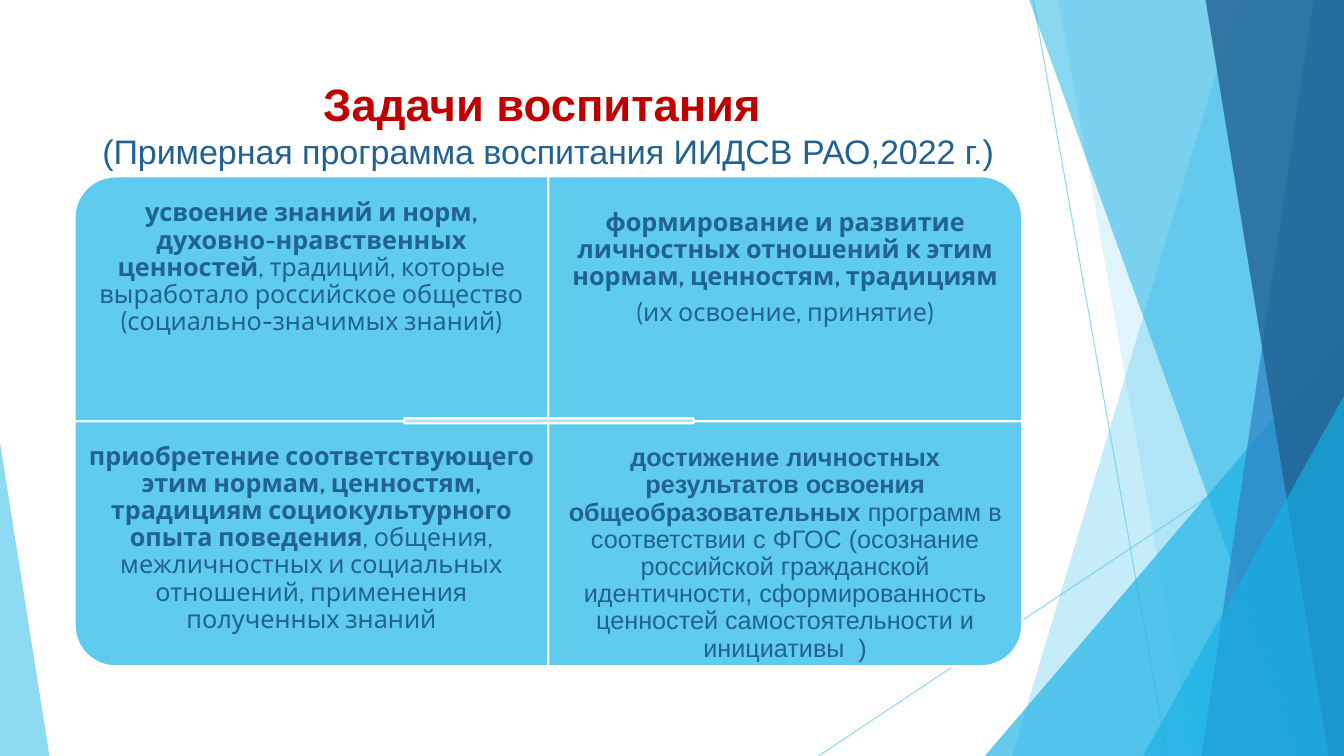
import dataclasses

import lxml.etree
import pptx
import pptx.dml.color
import pptx.enum.shapes
import pptx.enum.text
import pptx.oxml.ns
import pptx.util

SHAPES = pptx.enum.shapes.MSO_SHAPE
ANCHOR = pptx.enum.text.MSO_ANCHOR


@dataclasses.dataclass(frozen=True)
class Theme:
    sky: str = "5FCBEF"
    cyan: str = "17B0E4"
    blue: str = "2E83C3"
    navy: str = "226292"
    pale: str = "B6E2F6"
    red: str = "C00000"
    white: str = "FFFFFF"
    heading_font: str = "Arial"
    body_font: str = "Cabin"
    heading_size: float = 32.4
    subtitle_size: float = 24.3
    body_size: float = 18
    panel_line: float = 1.5
    thin_line: float = 0.75


def add_run(paragraph, text, font, size, color, bold=False):
    run = paragraph.add_run()
    run.text = text
    run.font.name = font
    run.font.size = pptx.util.Pt(size)
    run.font.bold = bold
    run.font.color.rgb = pptx.dml.color.RGBColor.from_string(color)


def set_opacity(fill_element, percent):
    color = next(fill_element.iter(pptx.oxml.ns.qn("a:srgbClr")))
    alpha = lxml.etree.SubElement(color, pptx.oxml.ns.qn("a:alpha"))
    alpha.set("val", str(percent * 1000))


class SlideBuilder:
    """Draws on one slide; every length is a percentage of its width or height."""

    def __init__(self, deck, theme):
        self.theme = theme
        self.width, self.height = deck.slide_width, deck.slide_height
        self.slide = deck.slides.add_slide(deck.slide_layouts[6])
        self.shapes = self.slide.shapes

    def x(self, share):
        return round(self.width * share / 100)

    def y(self, share):
        return round(self.height * share / 100)

    def box(self, left, top, width, height):
        return self.x(left), self.y(top), self.x(width), self.y(height)

    def paint(self, shape, color, opacity=100, outline=None):
        shape.shadow.inherit = False
        shape.fill.solid()
        shape.fill.fore_color.rgb = pptx.dml.color.RGBColor.from_string(color)
        if opacity < 100:
            set_opacity(shape.fill._xPr.find(pptx.oxml.ns.qn("a:solidFill")), opacity)
        if outline:
            shape.line.color.rgb = pptx.dml.color.RGBColor.from_string(outline)
            shape.line.width = pptx.util.Pt(self.theme.panel_line)
        else:
            shape.line.fill.background()

    def ray(self, start, end):
        line = self.shapes.add_connector(
            pptx.enum.shapes.MSO_CONNECTOR.STRAIGHT,
            self.x(start[0]), self.y(start[1]), self.x(end[0]), self.y(end[1]))
        line.line.color.rgb = pptx.dml.color.RGBColor.from_string(self.theme.sky)
        line.line.width = pptx.util.Pt(self.theme.thin_line)
        properties = line._element.spPr
        set_opacity(properties, 70)
        lxml.etree.SubElement(properties, pptx.oxml.ns.qn("a:effectLst"))

    def wedge(self, top_x, bottom_x, color, opacity):
        """Full-height band from a slanted left side to the right slide edge."""
        outline = self.shapes.build_freeform(self.x(top_x), 0)
        outline.add_line_segments([
            (self.width, 0), (self.width, self.height), (self.x(bottom_x), self.height)])
        self.paint(outline.convert_to_shape(), color, opacity)

    def corner(self, left, top, width, apex, color, opacity):
        """Triangle standing on the bottom slide edge."""
        triangle = self.shapes.add_shape(
            SHAPES.ISOSCELES_TRIANGLE, *self.box(left, top, width, 100 - top))
        triangle.adjustments[0] = apex
        self.paint(triangle, color, opacity)

    def panel(self, left, top, width, height, rotation):
        """Panel whose one round corner is turned outwards by the rotation."""
        x, y, w, h = self.box(left, top, width, height)
        if rotation % 180:
            x, y, w, h = x + (w - h) // 2, y + (h - w) // 2, h, w
        shape = self.shapes.add_shape(SHAPES.ROUND_1_RECTANGLE, x, y, w, h)
        shape.rotation = rotation
        self.paint(shape, self.theme.sky, outline=self.theme.white)

    def bar(self, left, top, width, height):
        shape = self.shapes.add_shape(
            SHAPES.ROUNDED_RECTANGLE, *self.box(left, top, width, height))
        self.paint(shape, self.theme.pale, outline=self.theme.white)

    def frame(self, left, top, width, height, anchor):
        frame = self.shapes.add_textbox(*self.box(left, top, width, height)).text_frame
        frame.word_wrap = True
        frame.vertical_anchor = anchor
        return frame

    def title(self, area, heading, subtitle):
        theme = self.theme
        paragraph = self.frame(*area, ANCHOR.BOTTOM).paragraphs[0]
        paragraph.alignment = pptx.enum.text.PP_ALIGN.CENTER
        add_run(paragraph, heading, theme.heading_font, theme.heading_size, theme.red, True)
        paragraph.add_line_break()
        add_run(paragraph, subtitle, theme.heading_font, theme.subtitle_size, theme.navy)

    def body(self, area, paragraphs, font):
        frame = self.frame(*area, ANCHOR.MIDDLE)
        frame.margin_left = frame.margin_right = self.x(1.05)
        frame.margin_top = frame.margin_bottom = self.y(1.87)
        for index, runs in enumerate(paragraphs):
            paragraph = frame.add_paragraph() if index else frame.paragraphs[0]
            paragraph.alignment = pptx.enum.text.PP_ALIGN.CENTER
            paragraph.line_spacing = 0.9
            paragraph.space_after = pptx.util.Pt(0.35 * self.theme.body_size)
            for text, bold in runs:
                add_run(paragraph, text, font, self.theme.body_size, self.theme.navy, bold)


def draw_backdrop(page):
    theme = page.theme
    page.ray((76.88, 0), (86.85, 100))
    page.ray((100, 53.73), (60.9, 100))
    page.wedge(92.1, 75.3, theme.sky, 36)
    page.wedge(78.75, 88.73, theme.sky, 20)
    page.corner(73.28, 44.4, 26.72, 1, theme.cyan, 66)
    page.wedge(76.58, 96.83, theme.cyan, 50)
    page.wedge(97.73, 89.4, theme.blue, 70)
    page.wedge(89.7, 98.85, theme.navy, 80)
    page.corner(85.05, 52.4, 14.95, 1, theme.cyan, 66)
    page.corner(0, 58.53, 3.68, 0, theme.sky, 70)


def draw_tasks(page):
    left, top, width, height, text_height = 5.55, 23.33, 35.25, 32.4, 24.27
    body, arial = page.theme.body_font, page.theme.heading_font
    # column, row, rotation, top of text, font, paragraphs of (text, bold)
    tasks = [
        (0, 0, 270, top, body, [[
            ("усвоение знаний и норм, духовно-нравственных ценностей", True),
            (", традиций, которые выработало российское общество "
             "(социально-значимых знаний)", False)]]),
        (1, 0, 0, top, body, [
            [("формирование и развитие личностных отношений к этим нормам, "
              "ценностям, традициям", True)],
            [("(их освоение, принятие)", False)]]),
        (0, 1, 180, 59.1, body, [[
            ("приобретение соответствующего этим нормам, ценностям, традициям "
             "социокультурного опыта поведения", True),
            (", общения, межличностных и социальных отношений, применения "
             "полученных знаний", False)]]),
        (1, 1, 90, 61.1, arial, [[
            ("достижение личностных результатов освоения общеобразовательных ", True),
            ("программ в соответствии с ФГОС (осознание российской гражданской "
             "идентичности, сформированность ценностей самостоятельности и "
             "инициативы  )", False)]]),
    ]
    for column, row, rotation, text_top, font, paragraphs in tasks:
        x = left + column * width
        page.panel(x, top + row * height, width, height, rotation)
        page.body((x, text_top, width, text_height), paragraphs, font)
    page.bar(30.08, 55.33, 21.53, 0.67)


def main():
    deck = pptx.Presentation()
    deck.slide_width, deck.slide_height = pptx.util.Inches(13.33), pptx.util.Inches(7.5)
    page = SlideBuilder(deck, Theme())
    draw_backdrop(page)
    page.title((5.55, 9.2, 70.5, 14.13), "Задачи воспитания ",
               "(Примерная программа воспитания ИИДСВ РАО,2022 г.)")
    draw_tasks(page)
    deck.save("out.pptx")


if __name__ == "__main__":
    main()
